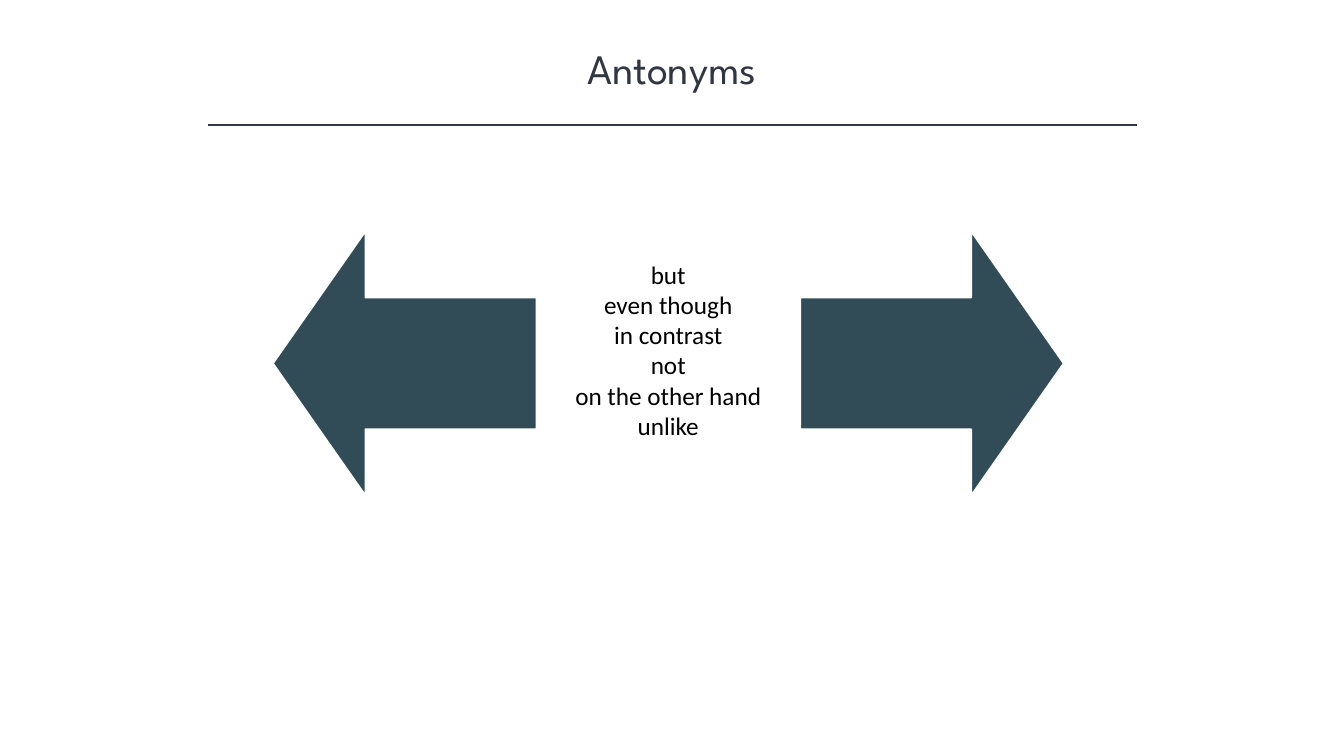
from dataclasses import dataclass

from lxml.etree import SubElement
from pptx import Presentation
from pptx.dml.color import RGBColor
from pptx.enum.shapes import MSO_CONNECTOR, MSO_SHAPE
from pptx.enum.text import MSO_AUTO_SIZE, PP_ALIGN
from pptx.oxml.ns import qn
from pptx.shapes.autoshape import Shape
from pptx.slide import Slide
from pptx.util import Inches, Length, Pt

COLUMNS, ROWS = 80, 45
CELL = Inches(1) // 6

INK = "323542"
ARROW_FILL = "314C57"
WHITE = "FFFFFF"
BLACK = "000000"

SIGNAL_WORDS = ["but", "even though", "in contrast", "not", "on the other hand", "unlike"]


@dataclass(frozen=True)
class Area:
    """A rectangle in grid columns and rows."""
    column: float
    row: float
    columns: float
    rows: float

    def lengths(self) -> tuple[Length, ...]:
        return tuple(map(cells, (self.column, self.row, self.columns, self.rows)))


@dataclass(frozen=True)
class Arrow:
    area: Area
    rotation: int


ARROW_SIDE = 15.66
ARROWS = [
    Arrow(Area(16.26, 13.8, ARROW_SIDE, ARROW_SIDE), 270),
    Arrow(Area(47.64, 13.8, ARROW_SIDE, ARROW_SIDE), 90),
]


def cells(count: float) -> Length:
    return Length(round(count * CELL))


def color(hex_code: str) -> RGBColor:
    return RGBColor.from_string(hex_code)


def add_text(slide: Slide, area: Area, lines: list[str], *, font: str, size: float,
             ink: str) -> Shape:
    box = slide.shapes.add_textbox(*area.lengths())
    frame = box.text_frame
    frame.word_wrap = True
    frame.auto_size = MSO_AUTO_SIZE.SHAPE_TO_FIT_TEXT
    frame.text = "\n".join(lines)
    for paragraph in frame.paragraphs:
        paragraph.alignment = PP_ALIGN.CENTER
        for run in paragraph.runs:
            run.font.name = font
            run.font.size = Pt(size)
            run.font.color.rgb = color(ink)
    return box


def add_rule(slide: Slide, start: float, end: float, row: float) -> None:
    """Draw a horizontal line between two columns."""
    rule = slide.shapes.add_connector(
        MSO_CONNECTOR.STRAIGHT, cells(start), cells(row), cells(end), cells(row))
    rule.line.color.rgb = color(INK)
    rule.line.width = Pt(1)
    SubElement(rule._element.spPr, qn("a:effectLst"))


def add_arrow(slide: Slide, arrow: Arrow) -> None:
    shape = slide.shapes.add_shape(MSO_SHAPE.UP_ARROW, *arrow.area.lengths())
    shape.rotation = arrow.rotation
    shape.adjustments[0] = 0.5
    shape.adjustments[1] = 0.35
    shape.shadow.inherit = False
    shape.fill.solid()
    shape.fill.fore_color.rgb = color(ARROW_FILL)
    shape.line.color.rgb = color(WHITE)
    shape.line.width = Pt(1)


def main() -> None:
    deck = Presentation()
    deck.slide_width, deck.slide_height = cells(COLUMNS), cells(ROWS)
    slide = deck.slides.add_slide(deck.slide_layouts[6])

    add_text(slide, Area(10, 2.22, 60, 3.66), ["Antonyms"],
             font="League Spartan", size=30, ink=INK)
    add_rule(slide, 12.36, 67.68, 7.44)
    for arrow in ARROWS:
        add_arrow(slide, arrow)
    add_text(slide, Area(32.46, 15.12, 14.64, 11.52), SIGNAL_WORDS,
             font="Calibri", size=18, ink=BLACK)

    deck.save("out.pptx")


if __name__ == "__main__":
    main()
